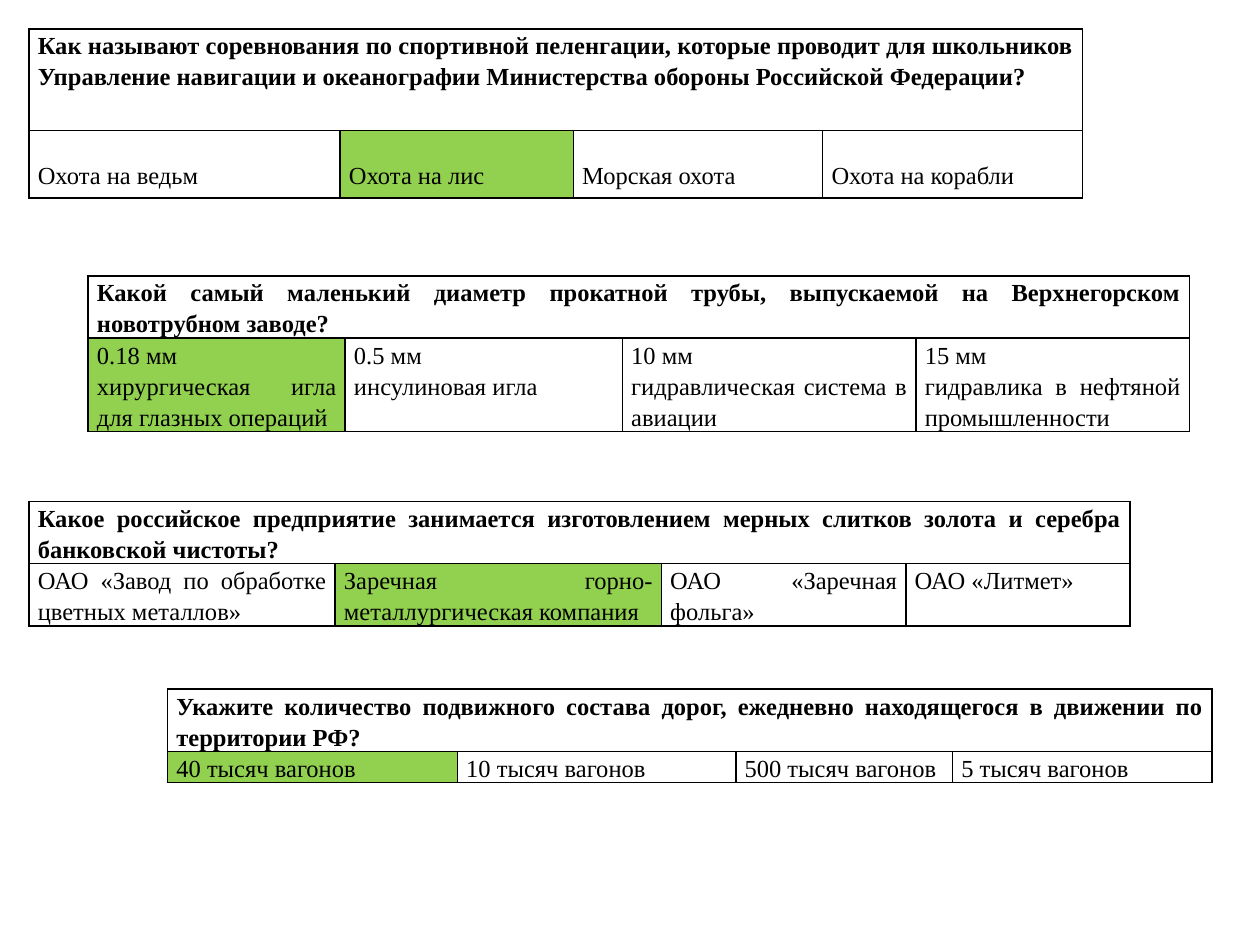
from dataclasses import dataclass

from lxml.etree import SubElement
from pptx import Presentation
from pptx.dml.color import RGBColor
from pptx.enum.text import PP_ALIGN
from pptx.oxml.ns import qn
from pptx.util import Inches, Pt


@dataclass(frozen=True)
class Theme:
    font: str = "Times New Roman"
    size: float = 14
    spacing: float = 1.15
    ink: str = "000000"
    correct: str = "92D050"
    border: float = 1
    side_margin: float = 0.07
    line: float = 0.24


THEME = Theme()

# Row heights are in text lines; "drop" is the space above the answers, in inches.
QUESTIONS = [
    dict(
        question="Как называют соревнования по спортивной пеленгации, которые проводит "
                 "для школьников Управление навигации и океанографии Министерства "
                 "обороны Российской Федерации?",
        answers=["Охота на ведьм", "Охота на лис", "Морская охота", "Охота на корабли"],
        correct=1, corner=(0.23, 0.23), columns=(2.47, 1.85, 1.98, 2.06),
        lines=(3.36, 2.23), drop=0.22,
    ),
    dict(
        question="Какой самый маленький диаметр прокатной трубы, выпускаемой на "
                 "Верхнегорском новотрубном заводе?",
        answers=["0.18 мм\nхирургическая игла для глазных операций",
                 "0.5 мм\nинсулиновая игла",
                 "10 мм\nгидравлическая система в авиации",
                 "15 мм\nгидравлика в нефтяной промышленности"],
        correct=0, corner=(0.7, 2.19), columns=(2.04, 2.2, 2.33, 2.17),
        lines=(2, 3), drop=0,
    ),
    dict(
        question="Какое российское предприятие занимается изготовлением мерных слитков "
                 "золота и серебра банковской чистоты?",
        answers=["ОАО «Завод по обработке цветных металлов»",
                 "Заречная горно-металлургическая компания",
                 "ОАО «Заречная фольга»",
                 "ОАО «Литмет»"],
        correct=1, corner=(0.23, 3.98), columns=(2.43, 2.59, 1.94, 1.78),
        lines=(2, 2), drop=0,
    ),
    dict(
        question="Укажите количество подвижного состава дорог, ежедневно находящегося "
                 "в движении по территории РФ?",
        answers=["40 тысяч вагонов", "10 тысяч вагонов",
                 "500 тысяч вагонов", "5 тысяч вагонов"],
        correct=0, corner=(1.33, 5.47), columns=(2.3, 2.21, 1.72, 2.06),
        lines=(2, 1), drop=0,
    ),
]


def outline(cell):
    properties = cell._tc.get_or_add_tcPr()
    for side in ("lnL", "lnR", "lnT", "lnB"):
        edge = SubElement(properties, qn(f"a:{side}"), w=str(Pt(THEME.border)))
        fill = SubElement(edge, qn("a:solidFill"))
        SubElement(fill, qn("a:srgbClr"), val=THEME.ink)


def write(cell, text, bold=False, top=0):
    cell.margin_left = cell.margin_right = Inches(THEME.side_margin)
    cell.margin_top, cell.margin_bottom = Inches(top), 0
    cell.text = text
    for paragraph in cell.text_frame.paragraphs:
        paragraph.alignment = PP_ALIGN.JUSTIFY
        paragraph.line_spacing = THEME.spacing
        font = paragraph.font
        font.name, font.size, font.bold = THEME.font, Pt(THEME.size), bold
        font.color.rgb = RGBColor.from_string(THEME.ink)


def add_question(slide, item):
    widths = [Inches(width) for width in item["columns"]]
    heights = [Inches(THEME.line * count) for count in item["lines"]]
    left, top = map(Inches, item["corner"])
    table = slide.shapes.add_table(
        len(heights), len(widths), left, top, sum(widths), sum(heights)).table
    table.first_row = table.horz_banding = False
    for column, width in zip(table.columns, widths):
        column.width = width
    for row, height in zip(table.rows, heights):
        row.height = height

    for cell in table.iter_cells():
        outline(cell)
        cell.fill.background()
    heading = table.cell(0, 0)
    heading.merge(table.cell(0, len(widths) - 1))
    write(heading, item["question"], bold=True)
    for index, answer in enumerate(item["answers"]):
        write(table.cell(1, index), answer, top=item["drop"])
    chosen = table.cell(1, item["correct"])
    chosen.fill.solid()
    chosen.fill.fore_color.rgb = RGBColor.from_string(THEME.correct)


def main():
    deck = Presentation()
    deck.slide_width, deck.slide_height = Inches(10), Inches(7.5)
    slide = deck.slides.add_slide(deck.slide_layouts[6])
    for item in QUESTIONS:
        add_question(slide, item)
    deck.save("out.pptx")


if __name__ == "__main__":
    main()
